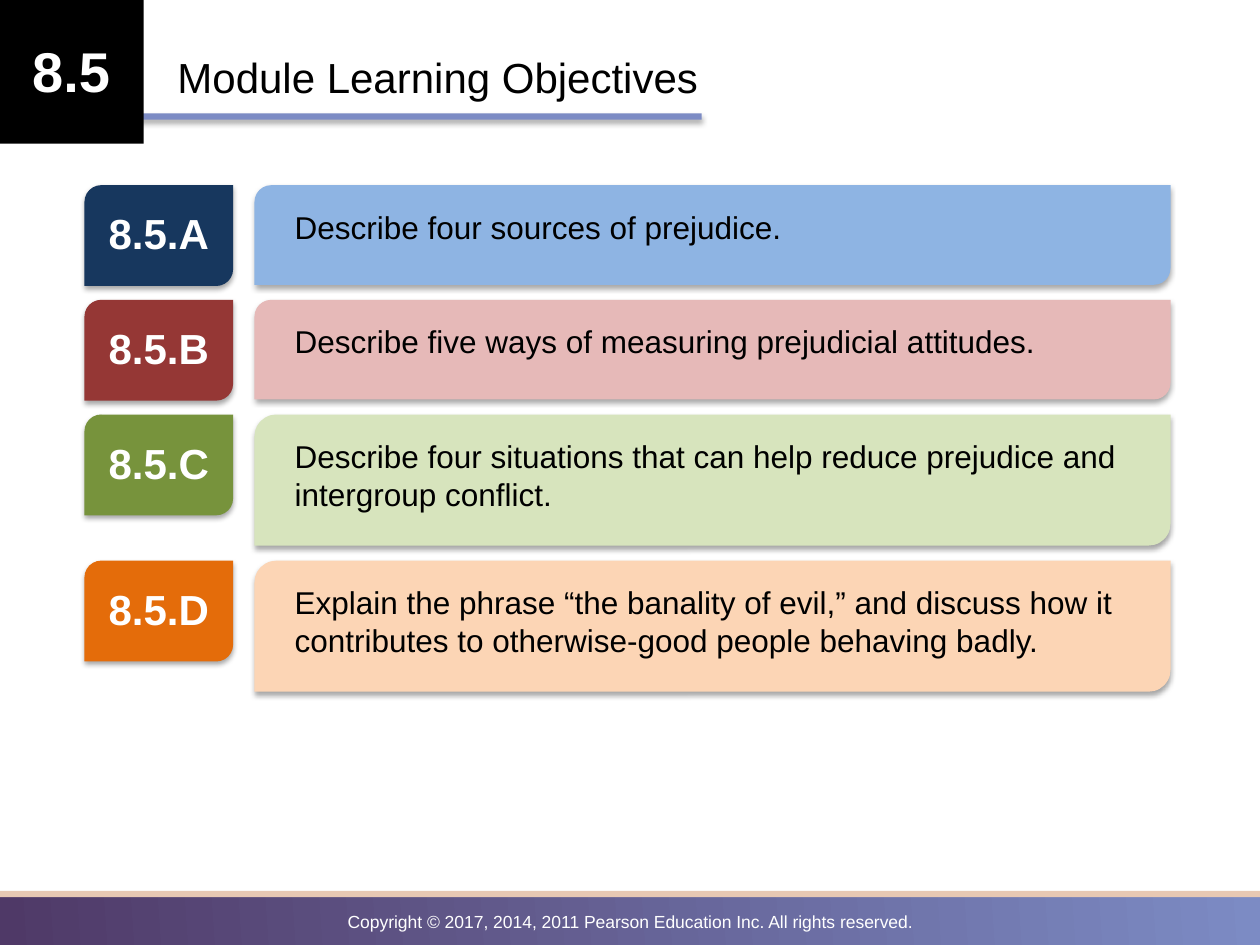
"""Build the Module 8.5 learning objectives slide."""
from lxml import etree
from pptx import Presentation
from pptx import util as u
from pptx.dml import color
from pptx.enum import shapes, text
from pptx.oxml import ns

COLORS = {
    "white": "FFFFFF", "black": "000000", "periwinkle": "7C8BC4",
    "plum": "4F3967", "sand": "E7C8B3",
    "navy": "17375E", "blue": "8EB4E3", "red": "953735", "pink": "E6B9B8",
    "green": "77933C", "lime": "D7E4BD", "orange": "E46C0A", "peach": "FCD5B5",
}
MODULE = "8.5"
TITLE = "Module Learning Objectives"
COPYRIGHT = "Copyright © 2017, 2014, 2011 Pearson Education Inc. All rights reserved."
OBJECTIVES = [
    ("8.5.A", "Describe four sources of prejudice.", "navy", "blue", 1),
    ("8.5.B", "Describe five ways of measuring prejudicial attitudes.", "red", "pink", 1),
    ("8.5.C", "Describe four situations that can help reduce prejudice and "
     "intergroup conflict.", "green", "lime", 2),
    ("8.5.D", "Explain the phrase “the banality of evil,” and discuss how it "
     "contributes to otherwise-good people behaving badly.", "orange", "peach", 2),
]
PANEL_HEIGHTS = {1: 0.79, 2: 1.04}
TEXT_HEIGHTS = {1: 0.4, 2: 0.71}
FIRST_TOP, ROW_GAP, TEXT_OFFSET = 1.47, 0.12, 0.13
RECTANGLE = shapes.MSO_SHAPE.RECTANGLE
ROUNDED = shapes.MSO_SHAPE.ROUND_2_DIAG_RECTANGLE


def rgb(name):
    return color.RGBColor.from_string(COLORS[name])


def add_shadow(shape):
    effects = shape._element.spPr.find(ns.qn("a:effectLst"))
    shadow = etree.SubElement(
        effects, ns.qn("a:outerShdw"), blurRad=str(u.Pt(3.1)),
        dist=str(u.Pt(1.8)), dir="5400000", rotWithShape="0")
    shade = etree.SubElement(shadow, ns.qn("a:srgbClr"), val=COLORS["black"])
    etree.SubElement(shade, ns.qn("a:alpha"), val="35000")


def add_block(slide, box, fill, kind=RECTANGLE, shadow=False):
    shape = slide.shapes.add_shape(kind, *map(u.Inches, box))
    shape.shadow.inherit = False
    shape.line.fill.background()
    shape.fill.solid()
    shape.fill.fore_color.rgb = rgb(fill)
    if shadow:
        add_shadow(shape)
    return shape


def add_label(slide, box, words, size, ink="black", bold=False, centered=False):
    frame = slide.shapes.add_textbox(*map(u.Inches, box)).text_frame
    frame.word_wrap = True
    frame.auto_size = text.MSO_AUTO_SIZE.SHAPE_TO_FIT_TEXT
    paragraph = frame.paragraphs[0]
    paragraph.alignment = text.PP_ALIGN.CENTER if centered else text.PP_ALIGN.LEFT
    run = paragraph.add_run()
    run.text = words
    run.font.name, run.font.size, run.font.bold = "Arial", u.Pt(size), bold
    run.font.color.rgb = rgb(ink)


def add_footer(slide):
    band = add_block(slide, (0, 7.08, 10, 0.45), "plum")
    band.fill.gradient()
    band.fill.gradient_angle = 4
    for stop, name, position in zip(band.fill.gradient_stops, ("plum", "periwinkle"), (0, 1)):
        stop.color.rgb = rgb(name)
        stop.position = position
    add_block(slide, (0, 7.07, 10.05, 0.05), "sand")
    add_label(slide, (0, 7.18, 10, 0.27), COPYRIGHT, 10, "white", centered=True)


def add_header(slide):
    add_block(slide, (-0.2, 0.9, 5.77, 0.05), "periwinkle", shadow=True)
    add_block(slide, (-0.01, -0.01, 1.15, 1.15), "black")
    add_label(slide, (-0.01, 0.24, 1.15, 0.64), MODULE, 32, "white", True, True)
    add_label(slide, (1.31, 0.36, 7.71, 0.5), TITLE, 24)


def add_objectives(slide):
    top = FIRST_TOP
    for code, goal, dark, light, lines in OBJECTIVES:
        height, text_top = PANEL_HEIGHTS[lines], top + TEXT_OFFSET
        add_block(slide, (0.67, top, 1.18, 0.8), dark, ROUNDED, True)
        add_label(slide, (0.67, text_top, 1.18, 0.5), code, 24, "white", True, True)
        add_block(slide, (2.02, top, 7.27, height), light, ROUNDED, True)
        add_label(slide, (2.24, text_top, 6.99, TEXT_HEIGHTS[lines]), goal, 18)
        top += height + ROW_GAP


def main():
    presentation = Presentation()
    presentation.slide_width, presentation.slide_height = u.Inches(10), u.Inches(7.5)
    slide = presentation.slides.add_slide(presentation.slide_layouts[6])
    add_footer(slide)
    add_header(slide)
    add_objectives(slide)
    presentation.save("out.pptx")


if __name__ == "__main__":
    main()
